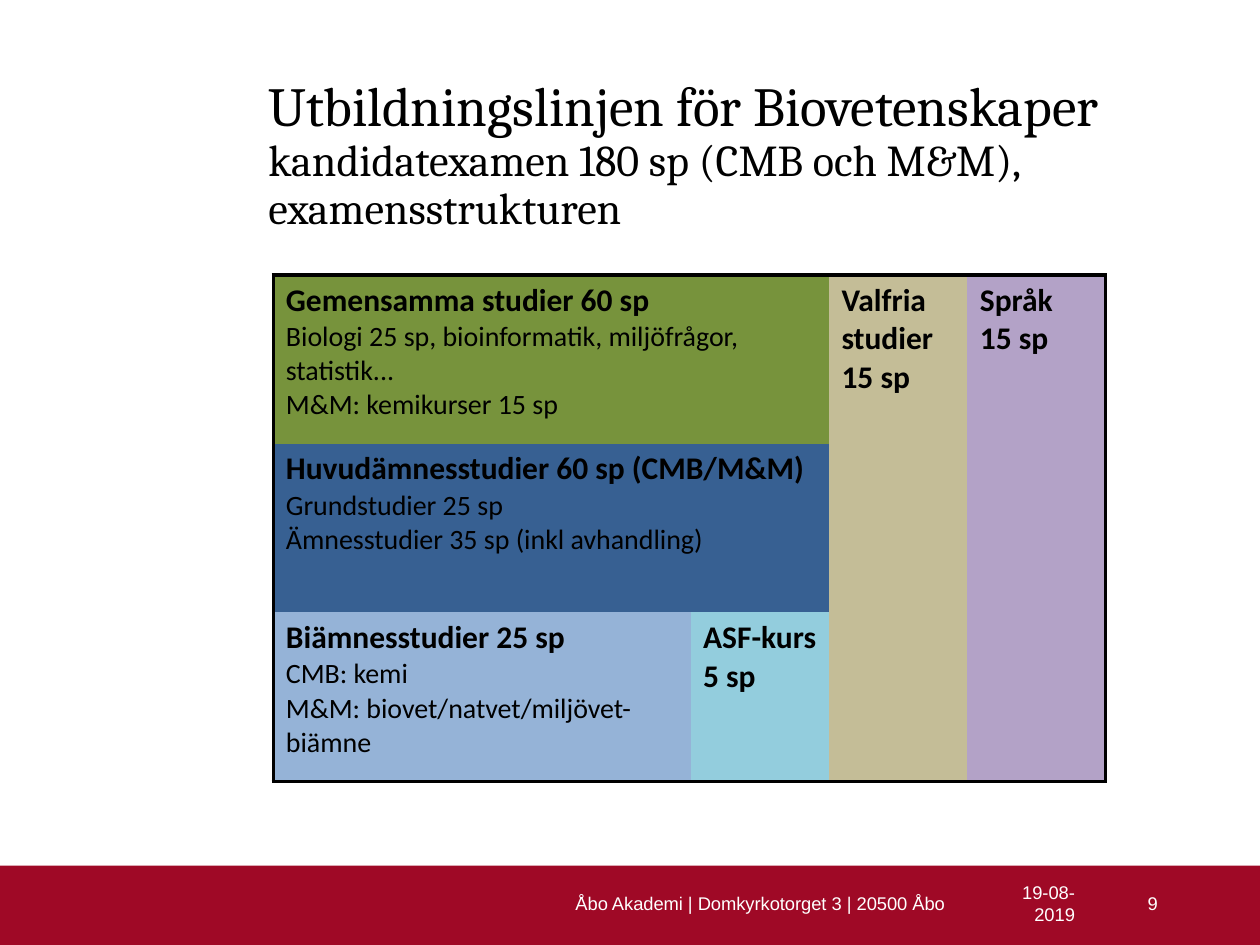
from itertools import product

from pptx import Presentation
from pptx.dml.color import RGBColor
from pptx.enum.shapes import MSO_SHAPE
from pptx.enum.text import MSO_ANCHOR, MSO_AUTO_SIZE, PP_ALIGN
from pptx.oxml.ns import qn
from pptx.util import Cm, Pt
from lxml import etree

RECTANGLE = MSO_SHAPE.RECTANGLE
TOP, MIDDLE = MSO_ANCHOR.TOP, MSO_ANCHOR.MIDDLE
LEFT, RIGHT = PP_ALIGN.LEFT, PP_ALIGN.RIGHT
NO_AUTOFIT = MSO_AUTO_SIZE.NONE

COLORS = {
    "text": "000000",
    "border": "000000",
    "footer": "9F0926",
    "footer text": "FFFFFF",
    "common": "77933C",
    "major": "376092",
    "minor": "95B3D7",
    "asf": "93CDDD",
    "elective": "C4BD97",
    "language": "B3A2C7",
}
NO_MARGINS = dict.fromkeys(("margin_left", "margin_top", "margin_right", "margin_bottom"), 0)
HEADING = {"name": "Calibri", "size": Pt(18), "bold": True}
DETAIL = {"name": "Calibri", "size": Pt(16), "bold": False}
FOOTER = {"name": "Arial", "size": Pt(10.5)}
TITLE_LINES = [
    ("Utbildningslinjen för Biovetenskaper", 31.5),
    ("kandidatexamen 180 sp (CMB och M&M),", 25.2),
    ("examensstrukturen", 25.2),
]
COLUMN_WIDTHS = [8.41, 2.79, 2.79, 2.79]
ROW_COUNT = 3
BLOCKS = [
    (0, 0, 1, 2, "common", ["Gemensamma studier 60 sp"],
     ["Biologi 25 sp, bioinformatik, miljöfrågor, statistik...", "M&M: kemikurser 15 sp"]),
    (1, 0, 1, 2, "major", ["Huvudämnesstudier 60 sp (CMB/M&M)"],
     ["Grundstudier 25 sp", "Ämnesstudier 35 sp (inkl avhandling)"]),
    (2, 0, 1, 1, "minor", ["Biämnesstudier 25 sp"],
     ["CMB: kemi", "M&M: biovet/natvet/miljövet-biämne"]),
    (2, 1, 1, 1, "asf", ["ASF-kurs 5 sp"], []),
    (0, 2, 3, 1, "elective", ["Valfria", "studier", "15 sp"], []),
    (0, 3, 3, 1, "language", ["Språk", "15 sp"], []),
]


def apply_format(target, values):
    """Set every attribute in values on target."""
    for name, value in values.items():
        setattr(target, name, value)


def add_run(paragraph, text, font_format, color):
    """Append a formatted run to a paragraph."""
    run = paragraph.add_run()
    run.text = text
    apply_format(run.font, font_format)
    run.font.color.rgb = RGBColor.from_string(COLORS[color])


def fill_solid(target, color):
    """Give a shape or cell a solid fill."""
    target.fill.solid()
    target.fill.fore_color.rgb = RGBColor.from_string(COLORS[color])


def set_title(slide, left, top, width, height):
    """Place the title placeholder and write its lines."""
    title = slide.shapes.title
    apply_format(title, {"left": Cm(left), "top": Cm(top), "width": Cm(width), "height": Cm(height)})
    apply_format(title.text_frame, {
        **NO_MARGINS, "word_wrap": True, "auto_size": NO_AUTOFIT, "vertical_anchor": TOP})
    paragraph = title.text_frame.paragraphs[0]
    apply_format(paragraph, {"alignment": LEFT, "line_spacing": 0.9})
    for index, (text, size) in enumerate(TITLE_LINES):
        if index:
            paragraph.add_line_break()
        add_run(paragraph, text, {"name": "Cambria", "size": Pt(size)}, "text")


def set_borders(cell, outer_edges):
    """Draw the outer edges of a cell and clear its inner ones."""
    properties = cell._tc.get_or_add_tcPr()
    for edge in "LRTB":
        line = etree.SubElement(properties, qn(f"a:ln{edge}"))
        if edge in outer_edges:
            line.set("w", str(Pt(2.25)))
            fill = etree.SubElement(line, qn("a:solidFill"))
            etree.SubElement(fill, qn("a:srgbClr"), val=COLORS["border"])
        else:
            etree.SubElement(line, qn("a:noFill"))


def find_outer_edges(row, column, row_span, column_span):
    """Return the letters of the sides that lie on the table's rim."""
    rim = {
        "L": column == 0,
        "R": column + column_span == len(COLUMN_WIDTHS),
        "T": row == 0,
        "B": row + row_span == ROW_COUNT,
    }
    return [edge for edge, is_outer in rim.items() if is_outer]


def add_block(table, row, column, row_span, column_span, color, headings, details):
    """Merge, colour and write one block of studies."""
    origin = table.cell(row, column)
    if row_span * column_span > 1:
        origin.merge(table.cell(row + row_span - 1, column + column_span - 1))
    for row_step, column_step in product(range(row_span), range(column_span)):
        cell = table.cell(row + row_step, column + column_step)
        span = (1, 1) if row_step or column_step else (row_span, column_span)
        set_borders(cell, find_outer_edges(row + row_step, column + column_step, *span))
        fill_solid(cell, color)
    lines = [(text, HEADING) for text in headings] + [(text, DETAIL) for text in details]
    for index, (text, font_format) in enumerate(lines):
        frame = origin.text_frame
        paragraph = frame.add_paragraph() if index else frame.paragraphs[0]
        add_run(paragraph, text, font_format, "text")


def add_structure_table(slide, left, top, height):
    """Add the table of the degree structure."""
    table = slide.shapes.add_table(
        ROW_COUNT, len(COLUMN_WIDTHS), Cm(left), Cm(top), Cm(sum(COLUMN_WIDTHS)), Cm(height)).table
    apply_format(table, {"first_row": False, "horz_banding": False})
    for column, width in zip(table.columns, COLUMN_WIDTHS):
        column.width = Cm(width)
    for block in BLOCKS:
        add_block(table, *block)


def add_footer(slide, left, top, width, height):
    """Add the footer band with address, date and slide number."""
    band = slide.shapes.add_shape(RECTANGLE, Cm(left), Cm(top), Cm(width), Cm(height))
    band.shadow.inherit = False
    fill_solid(band, "footer")
    band.line.fill.background()
    items = [
        (9.33, 10.01, "Åbo Akademi | Domkyrkotorget 3 | 20500 Åbo", {}),
        (19.74, 2.21, "19-08-2019", {}),
        (22.33, 1.04, "9", NO_MARGINS),
    ]
    for offset, item_width, text, margins in items:
        box = slide.shapes.add_textbox(Cm(left + offset), Cm(top + 0.25), Cm(item_width), Cm(1.02))
        apply_format(box.text_frame, {"word_wrap": True, "vertical_anchor": MIDDLE, **margins})
        paragraph = box.text_frame.paragraphs[0]
        paragraph.alignment = RIGHT
        add_run(paragraph, text, FOOTER, "footer text")


def main():
    """Build and save the presentation."""
    presentation = Presentation()
    apply_format(presentation, {"slide_width": Cm(25.4), "slide_height": Cm(19.05)})
    slide = presentation.slides.add_slide(presentation.slide_layouts[5])
    add_footer(slide, -0.03, 17.45, 25.45, 1.63)
    set_title(slide, 5.41, 1.6, 19.99, 3.53)
    add_structure_table(slide, 5.51, 5.54, 10.21)
    presentation.save("out.pptx")


if __name__ == "__main__":
    main()
